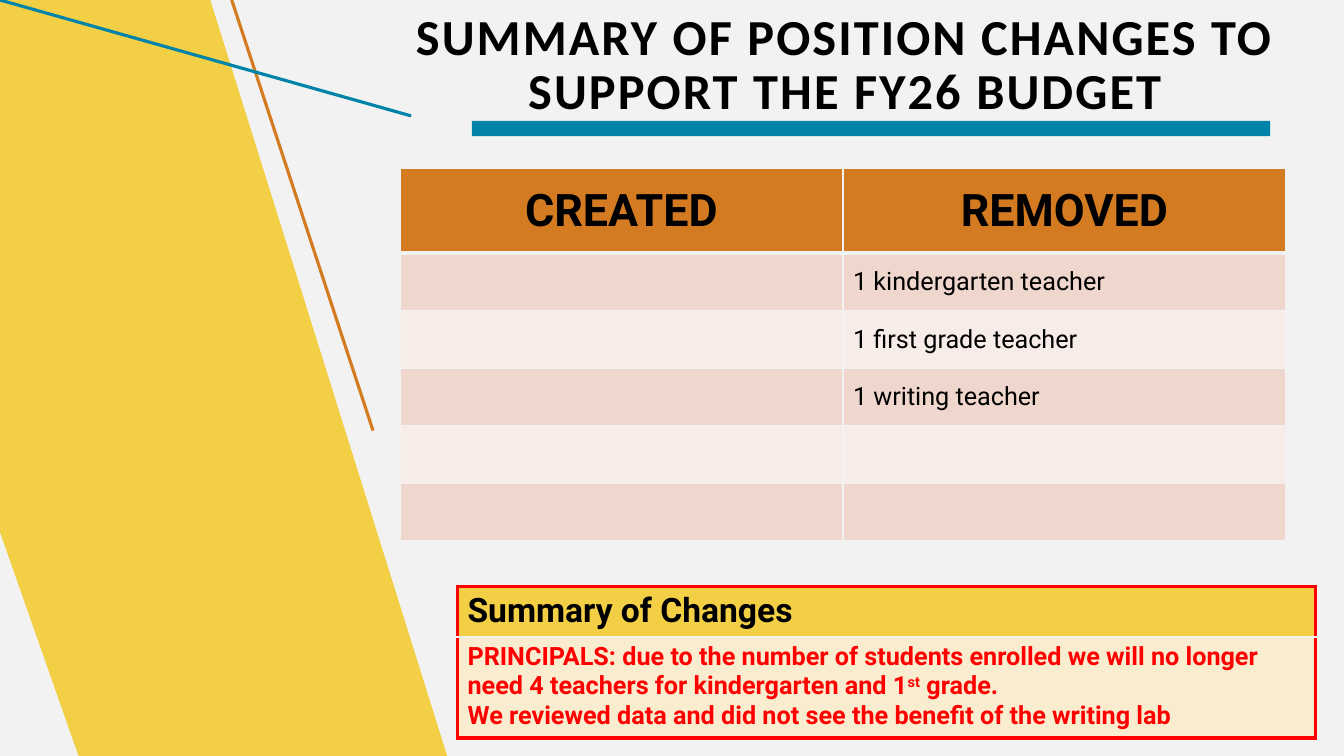
from lxml import etree
from pptx import Presentation
from pptx.dml.color import RGBColor
from pptx.enum.shapes import MSO_CONNECTOR, MSO_SHAPE
from pptx.enum.text import MSO_ANCHOR, PP_ALIGN
from pptx.oxml.ns import qn
from pptx.util import Cm, Pt

CENTER = PP_ALIGN.CENTER
LEFT = PP_ALIGN.LEFT
MIDDLE = MSO_ANCHOR.MIDDLE
TOP = MSO_ANCHOR.TOP
RECTANGLE = MSO_SHAPE.RECTANGLE
STRAIGHT = MSO_CONNECTOR.STRAIGHT

PALE, BLACK, RED = "F2F2F2", "000000", "FF0000"
YELLOW, ORANGE, BLUE = "F3CF45", "D47B22", "0083A9"
ROSE, LIGHT_ROSE, CREAM = "EFD7CD", "F7ECE8", "FAEDCF"
rgb = RGBColor.from_string


def add_span(para, text, size, color, bold=True, font="Roboto"):
    span = para.add_run()
    span.text = text
    span.font.size = Pt(size)
    span.font.name = font
    span.font.bold = bold
    span.font.color.rgb = rgb(color)
    return span


def paint_cell(cell, fill, borders):
    """Fill a cell; borders lists (colour, points) for left, right, top, bottom."""
    properties = cell._tc.get_or_add_tcPr()
    for side, (color, points) in zip(("lnL", "lnR", "lnT", "lnB"), borders):
        line = etree.SubElement(properties, qn("a:" + side), w=str(Pt(points)))
        solid = etree.SubElement(line, qn("a:solidFill"))
        etree.SubElement(solid, qn("a:srgbClr"), val=color)
    cell.fill.solid()
    cell.fill.fore_color.rgb = rgb(fill)


deck = Presentation()
deck.slide_width, deck.slide_height = Cm(33.87), Cm(19.05)
page = deck.slides.add_slide(deck.slide_layouts[6])
page.background.fill.solid()
page.background.fill.fore_color.rgb = rgb(PALE)

# Slanted decoration on the left
orange_line = page.shapes.add_connector(STRAIGHT, Cm(9.4), Cm(10.85), Cm(5.84), Cm(0))
builder = page.shapes.build_freeform(Cm(0), Cm(0))
builder.add_line_segments(
    [(Cm(x), Cm(y)) for x, y in [(5.3, 0), (11.27, 19.05), (1.98, 19.05), (0, 13.41)]])
band = builder.convert_to_shape()
blue_line = page.shapes.add_connector(STRAIGHT, Cm(10.36), Cm(2.92), Cm(0), Cm(0))
for connector, color in ((orange_line, ORANGE), (blue_line, BLUE)):
    connector.line.color.rgb = rgb(color)
    connector.line.width = Pt(2.25)
    etree.SubElement(connector._element.spPr, qn("a:effectLst"))

# Title and the bar under it
title = page.shapes.add_textbox(Cm(9.12), Cm(0.23), Cm(24.36), Cm(2.87))
title.text_frame.word_wrap = True
title.text_frame.vertical_anchor = MIDDLE
para = title.text_frame.paragraphs[0]
para.alignment = CENTER
para.line_spacing = 0.9
span = add_span(para, "SUMMARY OF POSITION CHANGES TO SUPPORT THE FY26 BUDGET",
                36, BLACK, font="Calibri")
span.font._element.set("spc", "150")

bar = page.shapes.add_shape(RECTANGLE, Cm(11.89), Cm(3.05), Cm(20.12), Cm(0.38))
for shape, color in ((band, YELLOW), (bar, BLUE)):
    shape.fill.solid()
    shape.fill.fore_color.rgb = rgb(color)
    shape.line.fill.background()
    shape.shadow.inherit = False

# Both tables
positions = page.shapes.add_table(6, 2, Cm(10.08), Cm(4.25), Cm(22.33), Cm(9.4)).table
summary = page.shapes.add_table(2, 1, Cm(11.53), Cm(14.78), Cm(21.62), Cm(3.76)).table
for table, heights in ((positions, [2.13] + [1.45] * 5), (summary, [1.27, 2.49])):
    table.first_row = table.horz_banding = False
    for row, height in zip(table.rows, heights):
        row.height = Cm(height)

thin, thick, frame = (PALE, 1), (PALE, 3), (RED, 3)
position_rows = [
    ("CREATED", "REMOVED"),
    ("", "1 kindergarten teacher"),
    ("", "1 first grade teacher"),
    ("", "1 writing teacher"),
    ("", ""),
    ("", ""),
]
for r, texts in enumerate(position_rows):
    header = r == 0
    fill = ORANGE if header else (ROSE if r % 2 else LIGHT_ROSE)
    top = thick if r == 1 else thin
    bottom = thick if header else thin
    for c, text in enumerate(texts):
        cell = positions.cell(r, c)
        paint_cell(cell, fill, (thin, thin, top, bottom))
        cell.vertical_anchor = MIDDLE
        para = cell.text_frame.paragraphs[0]
        para.alignment = CENTER if header else LEFT
        if text:
            add_span(para, text, 32 if header else 18, BLACK, bold=header)

heading, details = summary.cell(0, 0), summary.cell(1, 0)
paint_cell(heading, YELLOW, (frame, frame, frame, thin))
paint_cell(details, CREAM, (frame, frame, thin, frame))
heading.vertical_anchor = details.vertical_anchor = TOP
add_span(heading.text_frame.paragraphs[0], "Summary of Changes", 24, BLACK)
para = details.text_frame.paragraphs[0]
add_span(para, "PRINCIPALS: due to the number of students enrolled we will no longer "
               "need 4 teachers for kindergarten and 1", 18, RED)
ordinal = add_span(para, "st", 18, RED)
ordinal.font._element.set("baseline", "30000")
add_span(para, " grade.", 18, RED)
add_span(details.text_frame.add_paragraph(),
         "We reviewed data and did not see the benefit of the writing lab", 18, RED)

deck.save("out.pptx")
